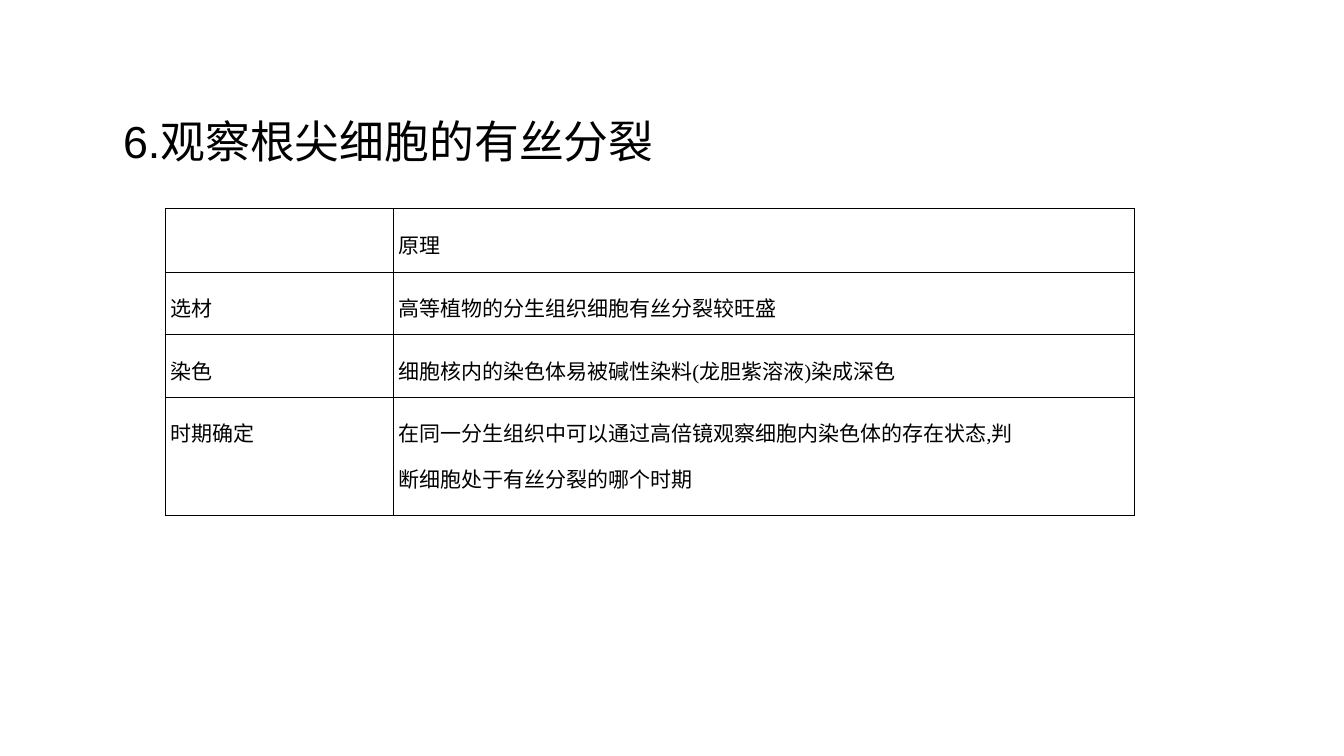
from dataclasses import dataclass

from lxml.etree import SubElement
from pptx import Presentation
from pptx.dml.color import RGBColor
from pptx.oxml.ns import qn
from pptx.slide import Slide
from pptx.table import Table, _Cell
from pptx.text.text import TextFrame
from pptx.util import Inches, Pt

BLACK = RGBColor(0x00, 0x00, 0x00)
WHITE = RGBColor(0xFF, 0xFF, 0xFF)
COLS = (2.26, 7.35)


@dataclass
class Row:
    label: str
    text: str
    height: float


ROWS = [
    Row("", "原理", 0.63),
    Row("选材", "高等植物的分生组织细胞有丝分裂较旺盛", 0.62),
    Row("染色", "细胞核内的染色体易被碱性染料(龙胆紫溶液)染成深色", 0.62),
    Row("时期确定", "在同一分生组织中可以通过高倍镜观察细胞内染色体的存在状态,判\n断细胞处于有丝分裂的哪个时期", 1.17),
]


def write(frame: TextFrame, text: str, size: float, font: str, inset: float) -> None:
    frame.word_wrap = True
    frame.margin_left = frame.margin_right = Inches(inset)
    frame.margin_top = frame.margin_bottom = Inches(inset)
    para = frame.paragraphs[0]
    para.text = text
    para.line_spacing = 1.5
    for run in para.runs:
        run.font.size = Pt(size)
        run.font.name = font
        run.font.color.rgb = BLACK


def border(cell: _Cell) -> None:
    props = cell._tc.get_or_add_tcPr()
    for side in ("a:lnL", "a:lnR", "a:lnT", "a:lnB"):
        line = SubElement(props, qn(side), w=str(Pt(0.75)))
        fill = SubElement(line, qn("a:solidFill"))
        SubElement(fill, qn("a:srgbClr"), val=str(BLACK))


def fill_cell(cell: _Cell, text: str) -> None:
    border(cell)
    cell.fill.solid()
    cell.fill.fore_color.rgb = WHITE
    write(cell.text_frame, text, 15, "Times New Roman", 0.05)
    cell.margin_left = cell.margin_right = Inches(0.05)
    cell.margin_top = cell.margin_bottom = Inches(0.05)


def add_grid(slide: Slide) -> Table:
    tall = sum(row.height for row in ROWS)
    frame = slide.shapes.add_table(
        len(ROWS), len(COLS), Inches(1.64), Inches(2.07), Inches(sum(COLS)), Inches(tall)
    )
    table = frame.table
    table.first_row = False
    table.horz_banding = False
    for col, width in zip(table.columns, COLS):
        col.width = Inches(width)
    for index, row in enumerate(ROWS):
        table.rows[index].height = Inches(row.height)
        for place, text in enumerate((row.label, row.text)):
            fill_cell(table.cell(index, place), text)
    return table


def main() -> None:
    deck = Presentation()
    deck.slide_width = Inches(13.33)
    deck.slide_height = Inches(7.5)
    slide = deck.slides.add_slide(deck.slide_layouts[6])
    title = slide.shapes.add_textbox(Inches(1.22), Inches(0.86), Inches(8.91), Inches(0.73))
    write(title.text_frame, "6.观察根尖细胞的有丝分裂", 32, "Arial", 0)
    add_grid(slide)
    deck.save("out.pptx")


if __name__ == "__main__":
    main()
